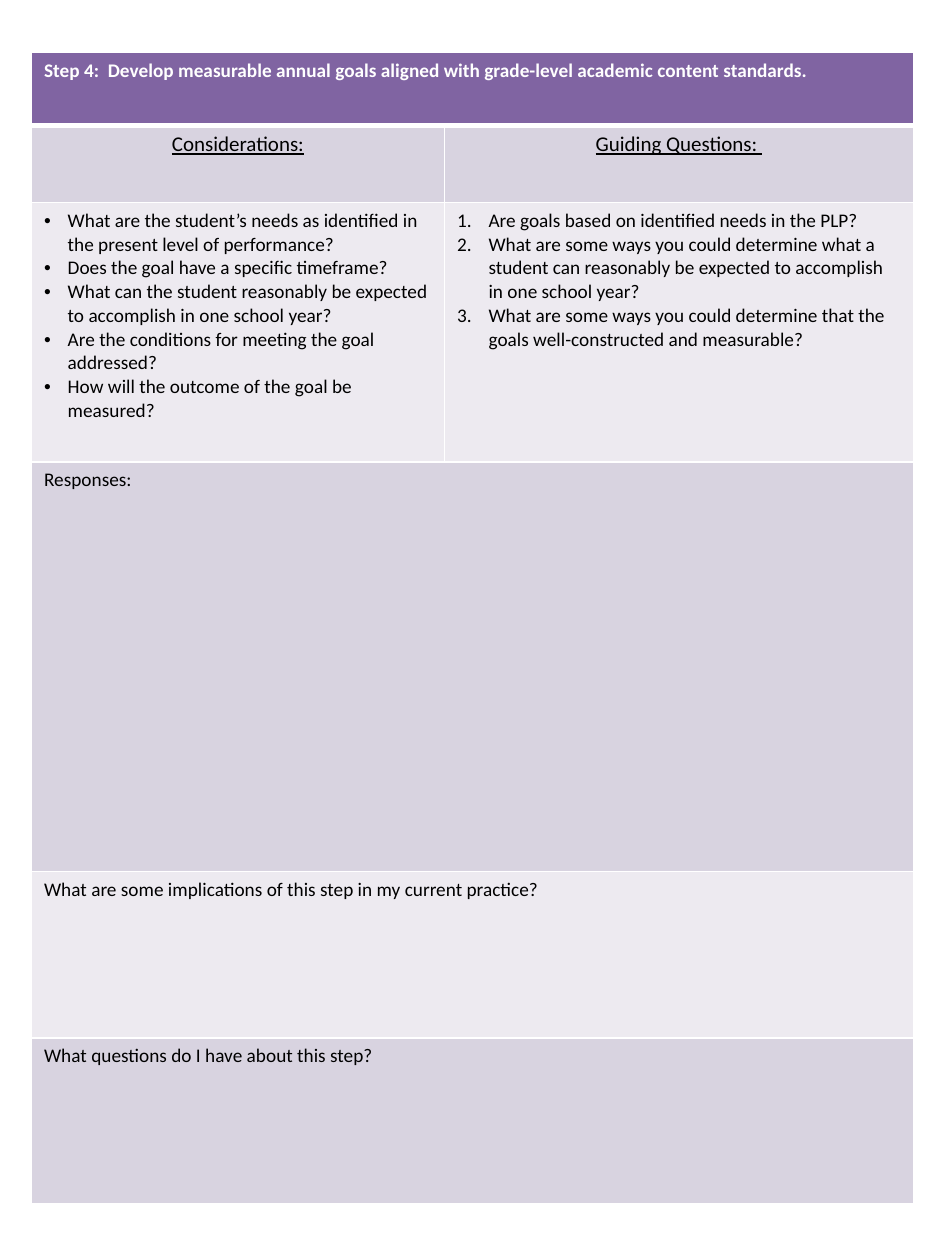
from dataclasses import dataclass
from typing import Optional

from lxml.etree import SubElement
from pptx import Presentation
from pptx.dml.color import RGBColor
from pptx.enum.text import PP_ALIGN
from pptx.oxml.ns import qn
from pptx.table import Table, _Cell
from pptx.util import Pt


@dataclass(frozen=True)
class Theme:
    font: str = "Calibri"
    body: float = 11
    head: float = 12
    white: str = "FFFFFF"
    black: str = "000000"
    title: str = "8064A2"
    dark: str = "D8D3E0"
    light: str = "EDEAF0"
    line: float = 1
    rule: float = 3


@dataclass(frozen=True)
class Mark:
    tag: str
    key: str
    value: str
    indent: float


@dataclass(frozen=True)
class Entry:
    lines: tuple[str, ...]
    mark: Optional[Mark] = None


@dataclass(frozen=True)
class Row:
    height: float
    fill: str
    cells: tuple[Entry, ...]
    head: bool = False
    title: bool = False


THEME = Theme()
DOT = Mark("a:buChar", "char", "•", 13.5)
NUMBER = Mark("a:buAutoNum", "type", "arabicPeriod", 18)
WIDTHS = (236, 268)

NEEDS = Entry((
    "What are the student’s needs as identified in the present level of performance?",
    "Does the goal have a specific timeframe?",
    "What can the student reasonably be expected to accomplish in one school year?",
    "Are the conditions for meeting the goal addressed?",
    "How will the outcome of the goal be measured?",
), DOT)
GUIDES = Entry((
    "Are goals based on identified needs in the PLP?",
    "What are some ways you could determine what a student can reasonably "
    "be expected to accomplish in one school year?",
    "What are some ways you could determine that the goals well-constructed and measurable?",
), NUMBER)

ROWS = (
    Row(41.8, THEME.title, (Entry((
        "Step 4:  Develop measurable annual goals aligned with "
        "grade-level academic content standards.",)),), title=True),
    Row(44, THEME.dark,
        (Entry(("Considerations:",)), Entry(("Guiding Questions: ",))), head=True),
    Row(148.3, THEME.light, (NEEDS, GUIDES)),
    Row(234, THEME.dark, (Entry(("Responses:",)),)),
    Row(95, THEME.light,
        (Entry(("What are some implications of this step in my current practice?",)),)),
    Row(95, THEME.dark, (Entry(("What questions do I have about this step?",)),)),
)


def add_mark(para, mark: Mark) -> None:
    props = para._p.get_or_add_pPr()
    props.set("marL", str(Pt(mark.indent)))
    props.set("indent", str(-Pt(mark.indent)))
    if mark is DOT:
        SubElement(props, qn("a:buFont")).set("typeface", "Arial")
    SubElement(props, qn(mark.tag)).set(mark.key, mark.value)


def write(cell: _Cell, entry: Entry, row: Row) -> None:
    frame = cell.text_frame
    frame.text = "\n".join(entry.lines)
    for para in frame.paragraphs:
        if entry.mark:
            add_mark(para, entry.mark)
        if row.head:
            para.alignment = PP_ALIGN.CENTER
        font = para.font
        font.name = THEME.font
        font.size = Pt(THEME.head if row.head else THEME.body)
        font.bold = row.title
        font.underline = row.head
        font.color.rgb = RGBColor.from_string(THEME.white if row.title else THEME.black)


def border(cell: _Cell, top: float, bottom: float) -> None:
    props = cell._tc.get_or_add_tcPr()
    sides = {"L": THEME.line, "R": THEME.line, "T": top, "B": bottom}
    for side, width in sides.items():
        line = SubElement(props, qn(f"a:ln{side}"), w=str(Pt(width)))
        fill = SubElement(line, qn("a:solidFill"))
        SubElement(fill, qn("a:srgbClr"), val=THEME.white)


def draw_row(table: Table, index: int, row: Row) -> None:
    table.rows[index].height = Pt(row.height)
    top = THEME.rule if index and ROWS[index - 1].title else THEME.line
    bottom = THEME.rule if row.title else THEME.line
    cells = [table.cell(index, col) for col in range(len(WIDTHS))]
    for cell in cells:
        border(cell, top, bottom)
        cell.fill.solid()
        cell.fill.fore_color.rgb = RGBColor.from_string(row.fill)
    if len(row.cells) == 1:
        cells[0].merge(cells[-1])
    for cell, entry in zip(cells, row.cells):
        write(cell, entry, row)


def main() -> None:
    deck = Presentation()
    deck.slide_width, deck.slide_height = Pt(540), Pt(720)
    slide = deck.slides.add_slide(deck.slide_layouts[6])
    height = sum(row.height for row in ROWS)
    table = slide.shapes.add_table(
        len(ROWS), len(WIDTHS), Pt(18), Pt(30), Pt(sum(WIDTHS)), Pt(height)).table
    table.horz_banding = False
    for column, width in zip(table.columns, WIDTHS):
        column.width = Pt(width)
    for index, row in enumerate(ROWS):
        draw_row(table, index, row)
    deck.save("out.pptx")


if __name__ == "__main__":
    main()
